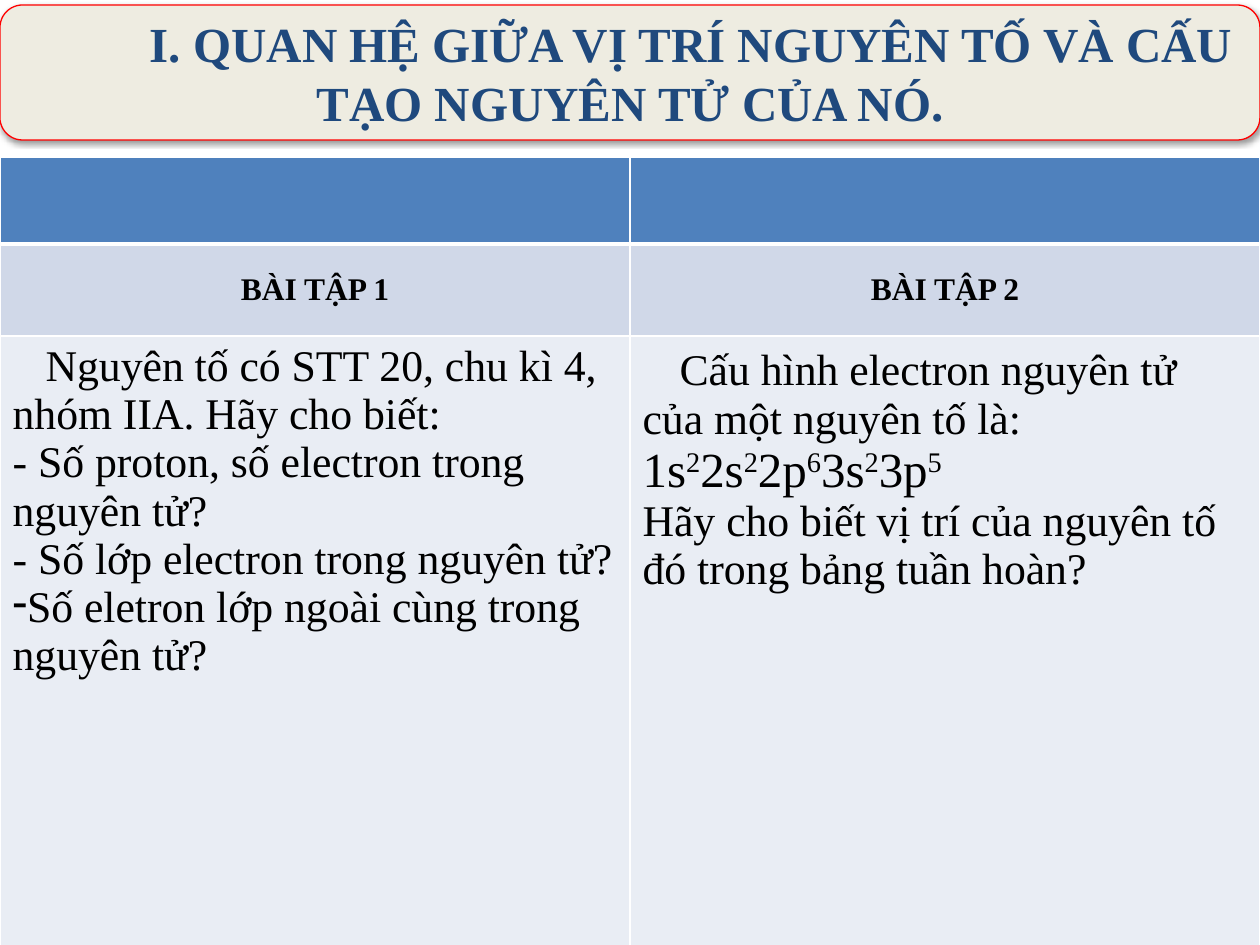
import pptx
import pptx.dml.color
import pptx.enum.shapes
import pptx.enum.text
import pptx.oxml
import pptx.oxml.ns
import pptx.util

EMU_PER_PX = 914400 / 126
FONT = "Times New Roman"
ALIGN = pptx.enum.text.PP_ALIGN
MIDDLE = pptx.enum.text.MSO_ANCHOR.MIDDLE
HEADER_FILL, LABEL_FILL, BODY_FILL = "4F81BD", "D0D8E8", "E9EDF4"
EXERCISES = ["BÀI TẬP 1", "BÀI TẬP 2"]
QUESTIONS = [
    "Nguyên tố có STT 20, chu kì 4, nhóm IIA. Hãy cho biết:",
    "- Số proton, số electron trong nguyên tử?",
    "- Số lớp electron trong nguyên tử?",
    "Số eletron lớp ngoài cùng trong nguyên tử?",
]
CONFIGURATION = [("1s", "2"), ("2s", "2"), ("2p", "6"), ("3s", "2"), ("3p", "5")]


def px(length):
    return pptx.util.Emu(round(length * EMU_PER_PX))


def color(value):
    return pptx.dml.color.RGBColor.from_string(value)


def xml(text):
    return pptx.oxml.parse_xml(text.replace(" ", f" {pptx.oxml.ns.nsdecls('a')} ", 1))


def fill(item, value):
    item.fill.solid()
    item.fill.fore_color.rgb = color(value)


def format_paragraph(paragraph, size, ink="000000", bold=False, align=ALIGN.LEFT, indent=0):
    properties = paragraph._p.get_or_add_pPr()
    properties.set("marL", "0")
    properties.set("indent", str(px(indent)))
    paragraph.alignment = align
    font = paragraph.font
    font.name, font.size, font.bold = FONT, pptx.util.Pt(size), bold
    font.color.rgb = color(ink)


def add_title(slide):
    banner = slide.shapes.add_shape(
        pptx.enum.shapes.MSO_SHAPE.ROUNDED_RECTANGLE, px(0), px(5), px(1260), px(135))
    fill(banner, "EEECE1")
    banner.line.color.rgb = color("FF0000")
    banner.line.width = pptx.util.Pt(0.75)
    banner.shadow.inherit = False
    effects = banner._element.spPr.find(pptx.oxml.ns.qn("a:effectLst"))
    effects.append(xml(
        '<a:outerShdw blurRad="39370" dist="20320" dir="5400000" rotWithShape="0">'
        '<a:srgbClr val="000000"><a:alpha val="38000"/></a:srgbClr></a:outerShdw>'))
    banner.text_frame.word_wrap = True
    banner.text_frame.vertical_anchor = MIDDLE
    title = banner.text_frame.paragraphs[0]
    title.text = "I. QUAN HỆ GIỮA VỊ TRÍ NGUYÊN TỐ VÀ CẤU TẠO NGUYÊN TỬ CỦA NÓ."
    format_paragraph(title, 28, "1F497D", True, ALIGN.CENTER, 122)


def style_cell(cell, background, top=1, bottom=1):
    properties = cell._tc.get_or_add_tcPr()
    for side, width in (("L", 1), ("R", 1), ("T", top), ("B", bottom)):
        properties.append(xml(
            f'<a:ln{side} w="{pptx.util.Pt(width)}"><a:solidFill>'
            f'<a:srgbClr val="FFFFFF"/></a:solidFill></a:ln{side}>'))
    fill(cell, background)


def write_questions(cell):
    frame = cell.text_frame
    for number, question in enumerate(QUESTIONS):
        paragraph = frame.add_paragraph() if number else frame.paragraphs[0]
        paragraph.text = question
        if number == len(QUESTIONS) - 1:
            paragraph._p.get_or_add_pPr().append(xml('<a:buChar char="-"/>'))
        format_paragraph(paragraph, 25, indent=0 if number else 33)


def write_configuration(cell):
    cell.margin_top = px(11)
    prompt = cell.text_frame.paragraphs[0]
    prompt.text = "Cấu hình electron nguyên tử của một nguyên tố là: "
    format_paragraph(prompt, 25, indent=37)
    for subshell, electrons in CONFIGURATION:
        for text, baseline in ((subshell, 0), (electrons, 30000)):
            run = prompt.add_run()
            run.text = text
            run.font.size = pptx.util.Pt(28)
            if baseline:
                run._r.get_or_add_rPr().set("baseline", str(baseline))
    request = cell.text_frame.add_paragraph()
    request.text = "Hãy cho biết vị trí của nguyên tố đó trong bảng tuần hoàn?"
    format_paragraph(request, 25)


def add_exercises(slide):
    heights = [87, 92, 629]
    table = slide.shapes.add_table(
        len(heights), len(EXERCISES), px(0), px(157), px(1260), px(sum(heights))).table
    for row, height in zip(table.rows, heights):
        row.height = px(height)
    for column, exercise in enumerate(EXERCISES):
        table.columns[column].width = px(630)
        header, label, body = (table.cell(row, column) for row in range(len(heights)))
        style_cell(header, HEADER_FILL, bottom=3)
        style_cell(label, LABEL_FILL, top=3)
        style_cell(body, BODY_FILL)
        label.vertical_anchor = MIDDLE
        label.text = exercise
        format_paragraph(label.text_frame.paragraphs[0], 18, bold=True, align=ALIGN.CENTER)
    write_questions(table.cell(2, 0))
    write_configuration(table.cell(2, 1))


def main():
    presentation = pptx.Presentation()
    presentation.slide_width, presentation.slide_height = px(1260), px(945)
    slide = presentation.slides.add_slide(presentation.slide_layouts[6])
    add_title(slide)
    add_exercises(slide)
    presentation.save("out.pptx")


if __name__ == "__main__":
    main()
